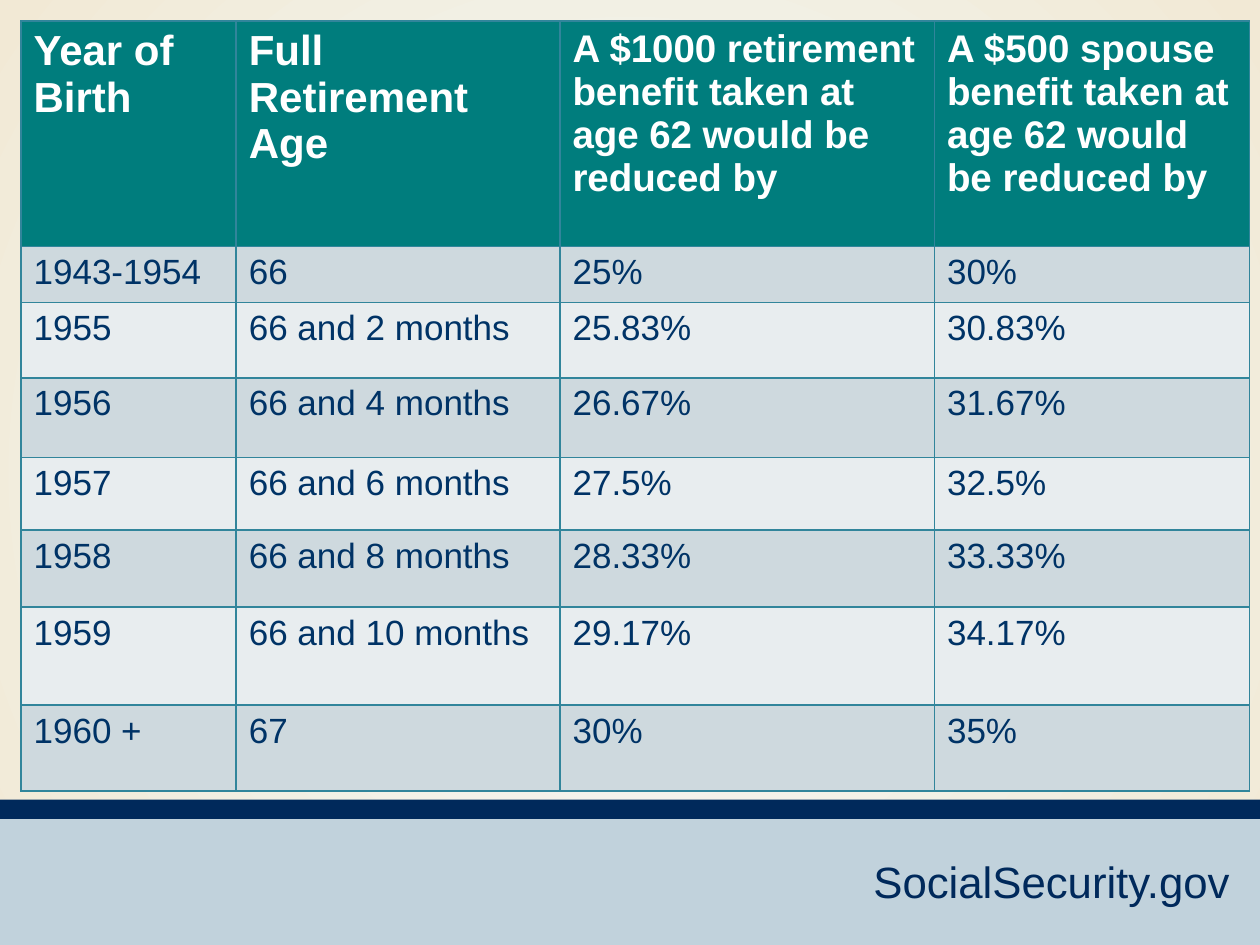
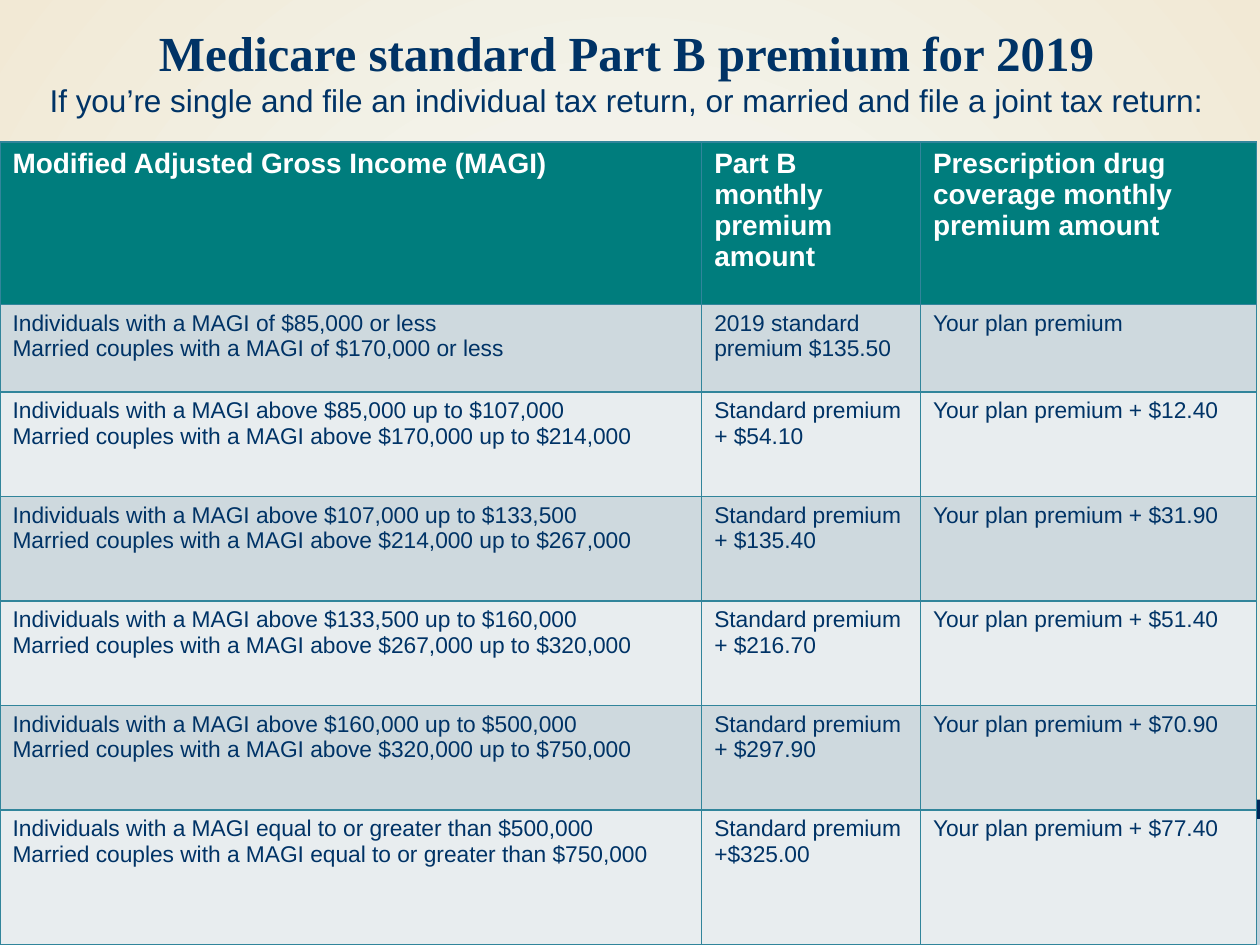
from dataclasses import dataclass

from lxml import etree
from pptx import Presentation
from pptx.dml.color import RGBColor
from pptx.enum import shapes, text
from pptx.oxml import parse_xml
from pptx.oxml.ns import nsdecls, qn
from pptx.slide import Slide
from pptx.util import Pt

NAVY = RGBColor(0x00, 0x29, 0x5B)
INK = RGBColor(0x00, 0x33, 0x66)
TEAL = RGBColor(0x00, 0x7D, 0x7D)
GRID = RGBColor(0x31, 0x85, 0x9B)
WHITE = RGBColor(0xFF, 0xFF, 0xFF)
FOOTER_BLUE = RGBColor(0xC1, 0xD2, 0xDC)
ROW_FILLS = (RGBColor(0xCE, 0xD9, 0xDE), RGBColor(0xE8, 0xED, 0xEF))
GLOW_CENTRE = RGBColor(0xF3, 0xFA, 0xFB)
GLOW_EDGE = RGBColor(0xF2, 0xE9, 0xD5)
SANS, SERIF = "Arial", "Times New Roman"
SLIDE_W, SLIDE_H = 720, 540
TITLE_ONLY, BLANK = 5, 6


@dataclass(frozen=True)
class Band:
    top: float
    height: float
    color: RGBColor


@dataclass(frozen=True)
class TableSpec:
    left: float
    top: float
    columns: tuple[float, ...]
    heights: tuple[float, ...]
    header_sizes: tuple[int, ...]
    body_size: int
    rows: list[tuple[str, ...]]


FOOTER_BANDS = (Band(464, 76, FOOTER_BLUE), Band(457, 11, NAVY))

RETIREMENT_AGES = TableSpec(
    12, 12, (123, 185, 214, 180), (129, 32, 43, 45.5, 41.5, 44, 56, 49),
    (24, 24, 22, 22), 20,
    [
        ("Year of Birth", "Full\nRetirement\nAge",
         "A $1000 retirement benefit taken at age 62 would be reduced by",
         "A $500 spouse benefit taken at age 62 would be reduced by"),
        ("1943-1954", "66", "25%", "30%"),
        ("1955", "66 and 2 months", "25.83%", "30.83%"),
        ("1956", "66 and 4 months", "26.67%", "31.67%"),
        ("1957", "66 and 6 months", "27.5%", "32.5%"),
        ("1958", "66 and 8 months", "28.33%", "33.33%"),
        ("1959", "66 and 10 months", "29.17%", "34.17%"),
        ("1960 +", "67", "30%", "35%"),
    ],
)


def premium_row(single: str, couple: str, part_b: str, drug: str) -> tuple[str, ...]:
    return (f"Individuals with a MAGI {single}\nMarried couples with a MAGI {couple}",
            part_b, f"Your plan premium{drug}")


PREMIUMS = TableSpec(
    0, 81, (401, 125, 192), (93, 50, *[59.75] * 4, 77), (16, 16, 16), 13,
    [
        ("Modified Adjusted Gross Income (MAGI)", "Part B monthly premium amount",
         "Prescription drug coverage monthly premium amount"),
        premium_row("of $85,000 or less", "of $170,000 or less",
                    "2019 standard premium $135.50", ""),
        premium_row("above $85,000 up to $107,000", "above $170,000 up to $214,000",
                    "Standard premium\n+ $54.10", " + $12.40"),
        premium_row("above $107,000 up to $133,500", "above $214,000 up to $267,000",
                    "Standard premium\n+ $135.40", " + $31.90"),
        premium_row("above $133,500 up to $160,000", "above $267,000 up to $320,000",
                    "Standard premium\n+ $216.70", " + $51.40"),
        premium_row("above $160,000 up to $500,000", "above $320,000 up to $750,000",
                    "Standard premium\n+ $297.90", " + $70.90"),
        premium_row("equal to or greater than $500,000", "equal to or greater than $750,000",
                    "Standard premium\n+$325.00", " + $77.40"),
    ],
)


def add_run(paragraph, words: str, size: float, color: RGBColor,
            bold: bool = False, face: str = SANS) -> None:
    run = paragraph.add_run()
    run.text = words
    run.font.name, run.font.size, run.font.bold = face, Pt(size), bold
    run.font.color.rgb = color


def paint_background(prs) -> None:
    """Give the master a radial glow that every slide inherits."""
    master = prs.slide_master
    glow = master.background.fill
    glow.gradient()
    for stop, color in zip(glow.gradient_stops, (GLOW_CENTRE, GLOW_EDGE)):
        stop.color.rgb = color
    linear = master.element.find(".//" + qn("p:bg")).find(".//" + qn("a:lin"))
    radial = etree.Element(qn("a:path"), {"path": "circle"})
    etree.SubElement(radial, qn("a:fillToRect"), {side: "50000" for side in "ltrb"})
    linear.getparent().replace(linear, radial)


def add_footer(slide: Slide) -> None:
    for band in FOOTER_BANDS:
        bar = slide.shapes.add_shape(shapes.MSO_SHAPE.RECTANGLE, 0, Pt(band.top),
                                     Pt(SLIDE_W), Pt(band.height))
        bar.shadow.inherit = False
        bar.fill.solid()
        bar.fill.fore_color.rgb = band.color
        bar.line.fill.background()
    site = slide.shapes.add_textbox(Pt(492), Pt(485), Pt(221), Pt(37.5)).text_frame
    site.word_wrap = True
    site.auto_size = text.MSO_AUTO_SIZE.SHAPE_TO_FIT_TEXT
    add_run(site.paragraphs[0], "SocialSecurity.gov", 25, NAVY)


def add_borders(cell) -> None:
    properties = cell._tc.get_or_add_tcPr()
    for side in "LRTB":
        properties.append(parse_xml(
            f'<a:ln{side} {nsdecls("a")} w="{Pt(1)}"><a:solidFill>'
            f'<a:srgbClr val="{GRID}"/></a:solidFill></a:ln{side}>'))


def add_grid(slide: Slide, spec: TableSpec) -> None:
    grid = slide.shapes.add_table(
        len(spec.rows), len(spec.columns), Pt(spec.left), Pt(spec.top),
        Pt(sum(spec.columns)), Pt(sum(spec.heights))).table
    grid.horz_banding = False
    for column, width in zip(grid.columns, spec.columns):
        column.width = Pt(width)
    for r, (height, entries) in enumerate(zip(spec.heights, spec.rows)):
        grid.rows[r].height = Pt(height)
        header = r == 0
        for c, entry in enumerate(entries):
            cell = grid.cell(r, c)
            add_borders(cell)
            cell.fill.solid()
            cell.fill.fore_color.rgb = TEAL if header else ROW_FILLS[(r - 1) % 2]
            size = spec.header_sizes[c] if header else spec.body_size
            for i, line in enumerate(entry.split("\n")):
                frame = cell.text_frame
                paragraph = frame.add_paragraph() if i else frame.paragraphs[0]
                add_run(paragraph, line, size, WHITE if header else INK, bold=header)


def add_heading(slide: Slide, headline: str, condition: str) -> None:
    heading = slide.shapes.title
    heading.left, heading.top = Pt(-2), Pt(9)
    heading.width, heading.height = Pt(SLIDE_W), Pt(63)
    frame = heading.text_frame
    frame.word_wrap = True
    frame.auto_size = text.MSO_AUTO_SIZE.SHAPE_TO_FIT_TEXT
    frame.vertical_anchor = text.MSO_ANCHOR.TOP
    add_run(frame.paragraphs[0], headline, 28, INK, bold=True, face=SERIF)
    add_run(frame.add_paragraph(), condition, 18, INK)
    for paragraph in frame.paragraphs:
        paragraph.alignment = text.PP_ALIGN.CENTER


def main() -> None:
    prs = Presentation()
    prs.slide_width, prs.slide_height = Pt(SLIDE_W), Pt(SLIDE_H)
    paint_background(prs)

    # Reductions by year of birth
    ages = prs.slides.add_slide(prs.slide_layouts[BLANK])
    add_footer(ages)
    add_grid(ages, RETIREMENT_AGES)

    # Premiums by income
    premiums = prs.slides.add_slide(prs.slide_layouts[TITLE_ONLY])
    add_footer(premiums)
    add_heading(premiums, "Medicare standard Part B premium for 2019",
                "If you’re single and file an individual tax return, "
                "or married and file a joint tax return:")
    add_grid(premiums, PREMIUMS)

    prs.save("out.pptx")


if __name__ == "__main__":
    main()
